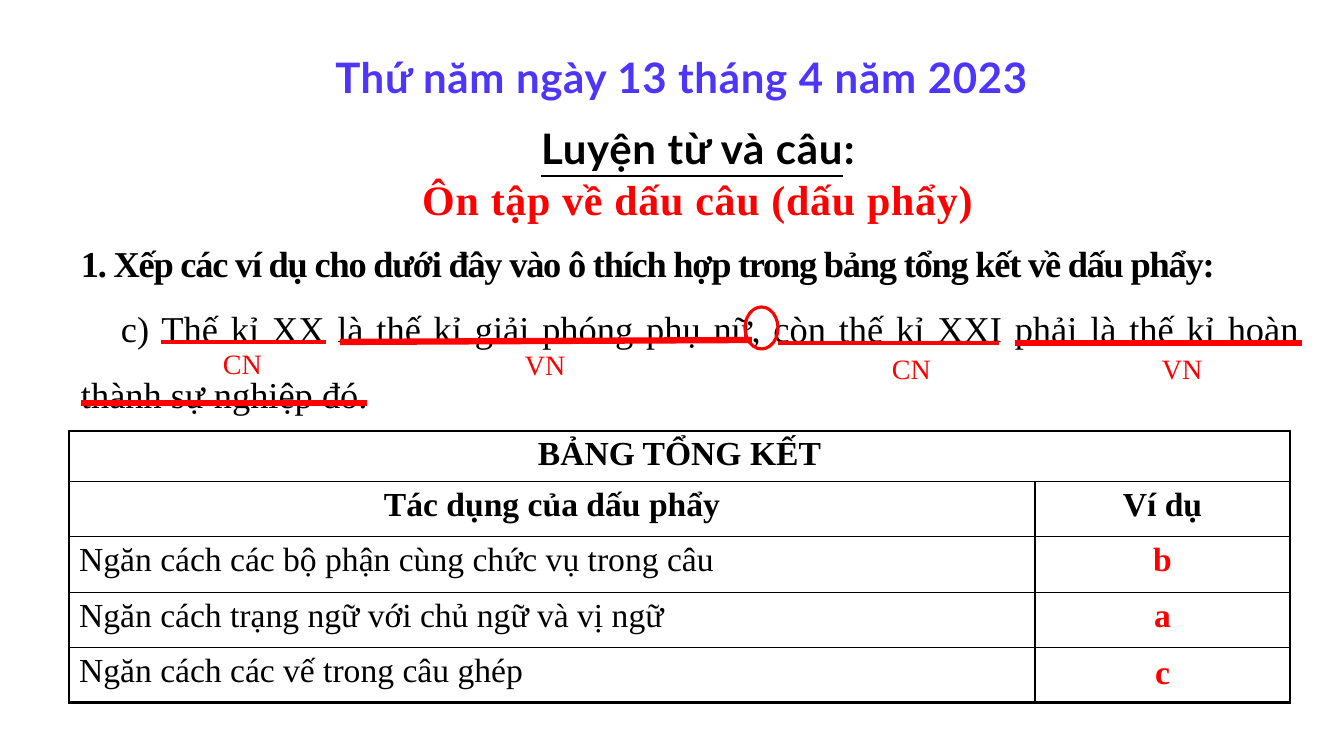
from lxml import etree
from pptx import Presentation
from pptx import util as u
from pptx.dml.color import RGBColor
from pptx.enum import shapes, text
from pptx.oxml import ns

SCALE = u.Inches(1) / 100.8
BLACK, RED, VIOLET, WHITE = "000000", "FF0000", "4D35FB", "FFFFFF"
SERIF, SANS = "Times New Roman", "Lato"
CENTER, JUSTIFY = text.PP_ALIGN.CENTER, text.PP_ALIGN.JUSTIFY


def px(value):
    return u.Emu(round(value * SCALE))


def color(value):
    return RGBColor.from_string(value)


class Board:
    def __init__(self, slide, font=SERIF, ink=BLACK):
        self.slide = slide
        self.font = font
        self.ink = ink

    def run(self, paragraph, words, size, font=None, ink=None, bold=False,
            underline=False, spacing=0):
        run = paragraph.add_run()
        run.text = words
        run.font.size = u.Pt(size)
        run.font.name = font or self.font
        run.font.color.rgb = color(ink or self.ink)
        run.font.bold = bold
        run.font.underline = underline
        if spacing:
            run.font._element.set("spc", str(round(spacing * 100)))

    def text_box(self, left, top, width, height, wrap=True, inset=(10, 5)):
        box = self.slide.shapes.add_textbox(px(left), px(top), px(width), px(height))
        frame = box.text_frame
        frame.word_wrap = wrap
        frame.auto_size = text.MSO_AUTO_SIZE.SHAPE_TO_FIT_TEXT
        frame.margin_left = frame.margin_right = px(inset[0])
        frame.margin_top = frame.margin_bottom = px(inset[1])
        return frame

    def paragraph(self, frame, align=None, first=True):
        paragraph = frame.paragraphs[0] if first else frame.add_paragraph()
        paragraph.alignment = align
        return paragraph

    def label(self, left, top, words):
        frame = self.text_box(left, top, 62, 43, wrap=False)
        self.run(self.paragraph(frame), words, 20, ink=RED)

    def underline(self, start, end, weight):
        line = self.slide.shapes.add_connector(
            shapes.MSO_CONNECTOR.STRAIGHT, *map(px, start + end))
        line.line.color.rgb = color(RED)
        line.line.width = u.Pt(weight)
        etree.SubElement(line._element.spPr, ns.qn("a:effectLst"))

    def shape(self, kind, left, top, width, height, fill=None, outline=None):
        shape = self.slide.shapes.add_shape(kind, px(left), px(top), px(width), px(height))
        shape.shadow.inherit = False
        if fill:
            shape.fill.solid()
            shape.fill.fore_color.rgb = color(fill)
        else:
            shape.fill.background()
        if outline:
            shape.line.color.rgb = color(outline)
            shape.line.width = u.Pt(2.25)
        else:
            shape.line.fill.background()
        return shape

    def borders(self, cell, weights):
        properties = cell._tc.get_or_add_tcPr()
        for side, weight in zip("LRTB", weights):
            line = etree.SubElement(properties, ns.qn(f"a:ln{side}"), w=str(u.Pt(weight)))
            fill = etree.SubElement(line, ns.qn("a:solidFill"))
            etree.SubElement(fill, ns.qn("a:srgbClr"), val=self.ink)

    def table(self, left, top, widths, heights, rows):
        table = self.slide.shapes.add_table(
            len(rows), len(widths), px(left), px(top),
            px(sum(widths)), px(sum(heights))).table
        table.first_row = table.horz_banding = False
        for column, width in zip(table.columns, widths):
            column.width = px(width)
        for row, height in zip(table.rows, heights):
            row.height = px(height)
        last_row, last_column = len(rows) - 1, len(widths) - 1
        for i, row in enumerate(rows):
            for j, words in enumerate(row):
                cell = table.cell(i, j)
                edges = (j == 0, j == last_column, i == 0, i == last_row)
                self.borders(cell, [2.25 if edge else 1 for edge in edges])
                cell.fill.background()
                if words:
                    header, answer = i < 2, i >= 2 and j == last_column
                    paragraph = self.paragraph(
                        cell.text_frame, CENTER if header or answer else None)
                    self.run(paragraph, words, 24, ink=RED if answer else None,
                             bold=header or answer)
        table.cell(0, 0).merge(table.cell(0, last_column))


def main():
    presentation = Presentation()
    presentation.slide_width, presentation.slide_height = px(1344), px(756)
    board = Board(presentation.slides.add_slide(presentation.slide_layouts[6]))

    exercise = board.text_box(69, 235, 1244, 188, inset=(12, 6))
    board.run(board.paragraph(exercise, JUSTIFY),
              "1. Xếp các ví dụ cho dưới đây vào ô thích hợp trong bảng tổng kết về dấu phẩy:",
              26, bold=True, spacing=-0.9)
    sentence = board.paragraph(exercise, JUSTIFY, first=False)
    sentence.line_spacing = 1.5
    sentence._p.get_or_add_pPr().set("indent", str(px(40)))
    board.run(sentence,
              "c) Thế kỉ XX là thế kỉ giải phóng phụ nữ, còn thế kỉ XXI phải là "
              "thế kỉ hoàn thành sự nghiệp đó.", 26)

    board.table(69, 431, [966, 255], [50, 55, 56, 55, 55], [
        ("BẢNG TỔNG KẾT", ""),
        ("Tác dụng của dấu phẩy", "Ví dụ"),
        ("Ngăn cách các bộ phận cùng chức vụ trong câu", "b"),
        ("Ngăn cách trạng ngữ với chủ ngữ và vị ngữ", "a"),
        ("Ngăn cách các vế trong câu ghép", ""),
    ])

    lesson = board.text_box(294, 118, 808, 112)
    subject = board.paragraph(lesson, CENTER)
    board.run(subject, "Luyện từ và câu", 30, SANS, bold=True, underline=True, spacing=0.5)
    board.run(subject, ":", 30, SANS, bold=True, spacing=0.5)
    board.run(board.paragraph(lesson, CENTER, first=False),
              "Ôn tập về dấu câu (dấu phẩy)", 30, ink=RED, bold=True, spacing=0.5)

    for start, end, weight in [
        ((161, 342), (326, 342), 2.25),
        ((340, 342), (752, 340), 4.5),
        ((778, 343), (999, 343), 2.25),
        ((1015, 343), (1302, 343), 4.5),
        ((81, 403), (367, 403), 4.5),
    ]:
        board.underline(start, end, weight)

    for left, top, words in [(213, 342, "CN"), (515, 343, "VN"),
                             (882, 347, "CN"), (1152, 347, "VN")]:
        board.label(left, top, words)

    board.shape(shapes.MSO_SHAPE.OVAL, 745, 307, 33, 42, outline=RED)

    answer = board.shape(shapes.MSO_SHAPE.RECTANGLE, 1042, 654, 241, 42, fill=WHITE)
    paragraph = board.paragraph(answer.text_frame, CENTER)
    paragraph.line_spacing = 0.8
    board.run(paragraph, "c", 24, ink=RED, bold=True)

    date = board.text_box(108, 47, 1148, 61)
    board.run(board.paragraph(date, CENTER), "Thứ năm ngày 13 tháng 4 năm 2023",
              30, SANS, VIOLET, bold=True, spacing=0.5)

    presentation.save("out.pptx")


if __name__ == "__main__":
    main()
